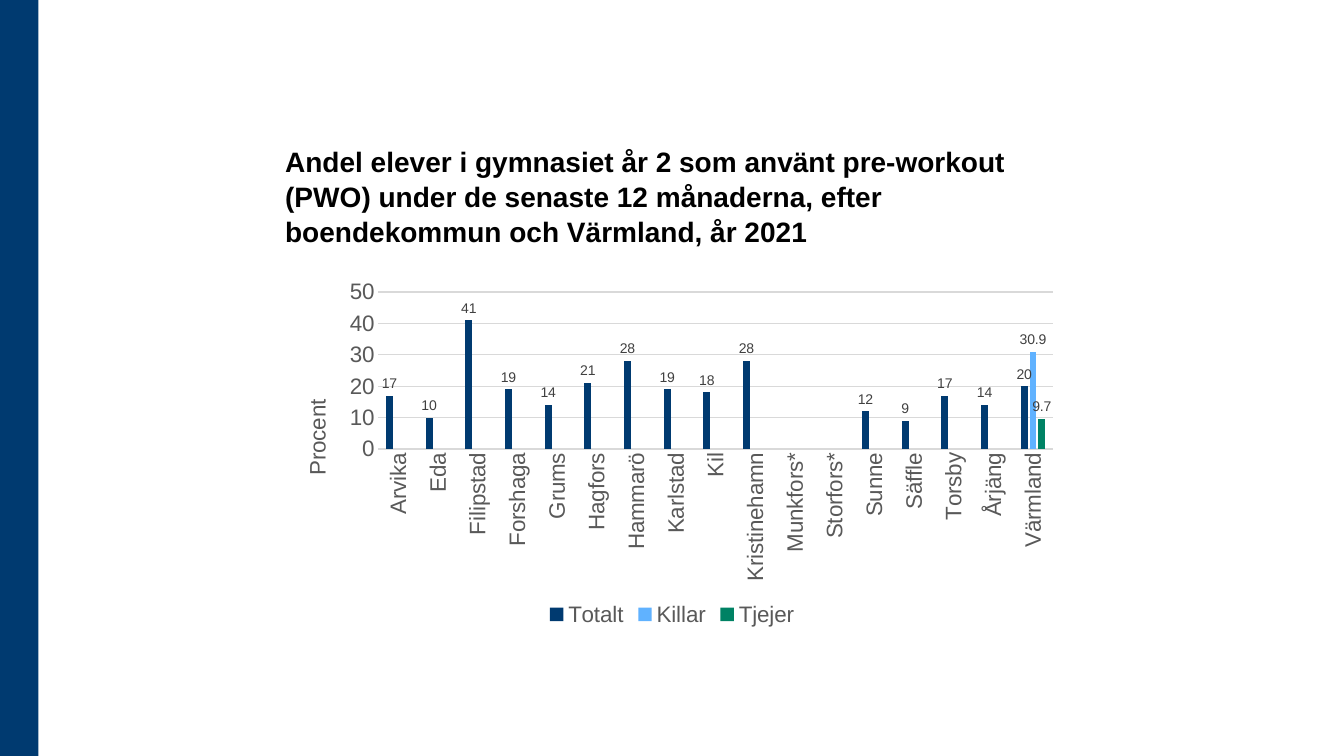
from lxml import etree
from pptx import Presentation
from pptx.chart.data import CategoryChartData
from pptx.dml.color import RGBColor
from pptx.enum import chart as kinds, shapes, text as texts
from pptx.oxml import ns
from pptx.util import Inches, Pt

NAVY = RGBColor(0x00, 0x3A, 0x70)
SKY = RGBColor(0x60, 0xB2, 0xFF)
GREEN = RGBColor(0x00, 0x82, 0x64)
BLACK = RGBColor(0, 0, 0)
GREY = RGBColor(0x59, 0x59, 0x59)
DARK = RGBColor(0x40, 0x40, 0x40)
PALE = RGBColor(0xD9, 0xD9, 0xD9)


def write(text, frame=None, font=None, size=16, color=GREY, bold=False):
    """Put text in a frame, or only format a given font."""
    if frame is not None:
        para = frame.paragraphs[0]
        run = para.add_run()
        run.text = text
        font = run.font
    font.name = "Arial"
    font.size = Pt(size)
    font.bold = bold
    font.color.rgb = color


def place(part, index, **spots):
    """Give a chart part a manual layout, in fractions of the chart."""
    for old in part.findall(ns.qn("c:layout")):
        part.remove(old)
    layout = etree.Element(ns.qn("c:layout"))
    manual = etree.SubElement(layout, ns.qn("c:manualLayout"))
    if "w" in spots:
        etree.SubElement(manual, ns.qn("c:layoutTarget"), val="inner")
    for side in "xy":
        etree.SubElement(manual, ns.qn(f"c:{side}Mode"), val="edge")
    for key, val in spots.items():
        etree.SubElement(manual, ns.qn(f"c:{key}"), val=str(val))
    part.insert(index, layout)


deck = Presentation()
deck.slide_width = Inches(13.33)
deck.slide_height = Inches(7.5)
slide = deck.slides.add_slide(deck.slide_layouts[6])

band = slide.shapes.add_shape(shapes.MSO_SHAPE.RECTANGLE, 0, 0, Inches(0.38), Inches(7.5))
band.shadow.inherit = False
band.fill.solid()
band.fill.fore_color.rgb = NAVY
band.line.fill.background()

# Heading
left, width = Inches(2.73), Inches(7.87)
head = slide.shapes.add_textbox(left, Inches(1.06), width, Inches(1.45)).text_frame
head.word_wrap = True
head.vertical_anchor = texts.MSO_ANCHOR.BOTTOM
write("Andel elever i gymnasiet år 2 som använt pre-workout (PWO) under de senaste "
      "12 månaderna, efter boendekommun och Värmland, år 2021",
      head, size=20, color=BLACK, bold=True)
head.paragraphs[0].line_spacing = 1.04

# Chart data: the split by sex exists only for the county, which comes last
total = {
    "Arvika": 17, "Eda": 10, "Filipstad": 41, "Forshaga": 19, "Grums": 14,
    "Hagfors": 21, "Hammarö": 28, "Karlstad": 19, "Kil": 18,
    "Kristinehamn": 28, "Munkfors*": None, "Storfors*": None, "Sunne": 12,
    "Säffle": 9, "Torsby": 17, "Årjäng": 14, "Värmland": 20,
}
blank = [None] * (len(total) - 1)
data = CategoryChartData()
data.categories = list(total)
data.add_series("Totalt", list(total.values()))
data.add_series("Killar", blank + [30.9])
data.add_series("Tjejer", blank + [9.7])

chart = slide.shapes.add_chart(kinds.XL_CHART_TYPE.COLUMN_CLUSTERED, left, Inches(2.72),
                               width, Inches(3.54), data).chart
write("", font=chart.font, color=BLACK)
chart.has_title = False
chart.has_legend = True
chart.legend.position = kinds.XL_LEGEND_POSITION.BOTTOM
chart.legend.include_in_layout = False
write("", font=chart.legend.font)

plot = chart.plots[0]
plot.gap_width = 219
plot.overlap = -27
plot.vary_by_categories = False
for series, color, digits in zip(plot.series, (NAVY, SKY, GREEN), ("0", "0.0", "0.0")):
    series.format.fill.solid()
    series.format.fill.fore_color.rgb = color
    series.invert_if_negative = False
    labels = series.data_labels
    labels.show_value = True
    labels.position = kinds.XL_LABEL_POSITION.OUTSIDE_END
    labels.number_format = digits
    labels.number_format_is_linked = False
    write("", font=labels.font, size=10, color=DARK)

towns, scale = chart.category_axis, chart.value_axis
for axis in (towns, scale):
    axis.major_tick_mark = axis.minor_tick_mark = kinds.XL_TICK_MARK.NONE
    write("", font=axis.tick_labels.font)
towns.format.line.color.rgb = PALE
towns.format.line.width = Pt(0.75)
turn = towns.tick_labels.font._element.getparent().getparent().getparent()
turn.find(ns.qn("a:bodyPr")).set("rot", "-5400000")

scale.minimum_scale = 0
scale.maximum_scale = 50
scale.major_unit = 10
scale.tick_labels.number_format = "0"
scale.tick_labels.number_format_is_linked = False
scale.format.line.fill.background()
grid = scale.major_gridlines.format.line
grid.color.rgb = PALE
grid.width = Pt(0.75)

name = scale.axis_title
write("Procent", name.text_frame)
body = name.text_frame._element.find(ns.qn("a:bodyPr"))
body.set("rot", "-5400000")
body.set("vert", "horz")
place(name._element, 1, x=0.03, y=0.34)
area = chart._chartSpace.find(".//" + ns.qn("c:plotArea"))
place(area, 0, x=0.13, y=0.05, w=0.85, h=0.44)

deck.save("out.pptx")
